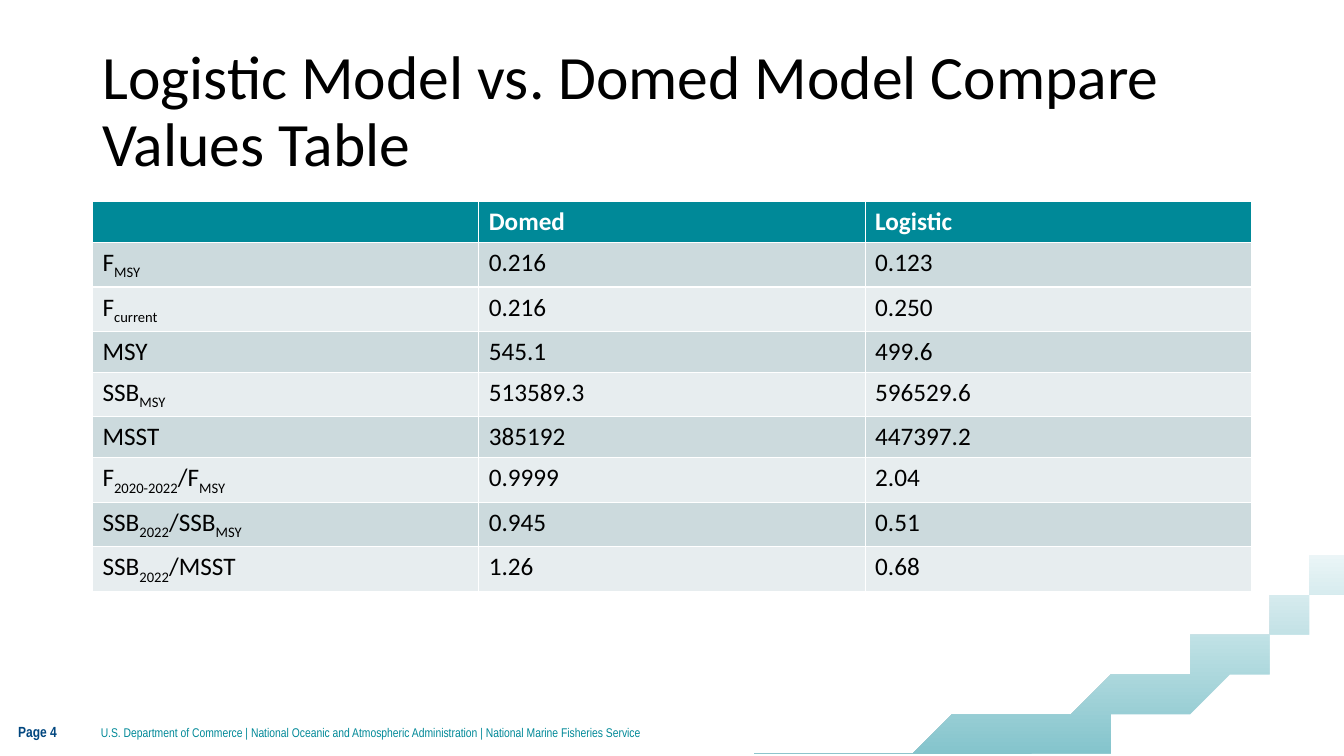
from pptx import Presentation
from pptx.dml.color import RGBColor
from pptx.enum.text import MSO_ANCHOR
from pptx.util import Cm, Pt

MIDDLE = MSO_ANCHOR.MIDDLE
TEAL, NAVY, BLACK, WHITE = "008998", "00467F", "000000", "FFFFFF"
BANDS = ("CCDADD", "E7EDEF")


def rgb(color):
    return RGBColor.from_string(color)


def format_run(r, size, name, color, bold=False):
    for key, value in {"size": Pt(size), "name": name, "bold": bold}.items():
        setattr(r.font, key, value)
    r.font.color.rgb = rgb(color)


prs = Presentation()
prs.slide_width, prs.slide_height = Cm(33.87), Cm(19.05)
s = prs.slides.add_slide(prs.slide_layouts[6])

# Swoosh: a shaded corner with a smaller white corner on top.
# Each: left end on the bottom edge, top end on the right edge, cubic curve.
corners = [
    (19.35, 13.41, [(33.66, 13.87), (32.18, 16.23), (27, 18.19), (20.22, 18.97)]),
    (25.73, 13.97, [(33.73, 14.35), (32.92, 16.51), (30.02, 18.26), (26.21, 18.97)]),
]
STEPS = 40
swoosh = []
for left, top, curve in corners:
    points = [(33.87, 19.05), (33.87, top)]
    for i in range(STEPS + 1):
        t = i / STEPS
        weights = ((1 - t) ** 3, 3 * t * (1 - t) ** 2, 3 * t ** 2 * (1 - t), t ** 3)
        points.append(tuple(sum(w * pt[axis] for w, pt in zip(weights, curve))
                            for axis in (0, 1)))
    builder = s.shapes.build_freeform(left, 19.05, scale=Cm(1))
    builder.add_line_segments(points, close=True)
    sp = builder.convert_to_shape()
    sp.shadow.inherit = False
    sp.line.fill.background()
    swoosh.append(sp)

shaded, cutout = swoosh
shaded.fill.gradient()
shaded.fill.gradient_angle = 270
for stop, color in zip(shaded.fill.gradient_stops, (WHITE, "84C4CC")):
    stop.color.rgb = rgb(color)
cutout.fill.solid()
cutout.fill.fore_color.rgb = rgb(WHITE)

# Footer and title: text, box, side inset, line spacing, font
texts = [
    ("U.S. Department of Commerce | National Oceanic and Atmospheric Administration"
     " | National Marine Fisheries Service",
     (2.54, 17.7, 24.82, 1.5), 0, 1, (9, "Arial Narrow", TEAL)),
    ("Page 4", (0.46, 17.65, 2.08, 1.55), 0, 1, (10.5, "Arial Narrow", NAVY, True)),
    ("Logistic Model vs. Domed Model Compare Values Table",
     (2.33, 1.01, 29.21, 3.68), 0.25, 0.9, (44, "Calibri", BLACK)),
]
for text, box, inset, spacing, font in texts:
    tf = s.shapes.add_textbox(*map(Cm, box)).text_frame
    tf.word_wrap = True
    tf.vertical_anchor = MIDDLE
    tf.margin_left = tf.margin_right = Cm(inset)
    p = tf.paragraphs[0]
    p.line_spacing = spacing
    r = p.add_run()
    r.text = text
    format_run(r, *font)

# In the labels, every second part between bars is a subscript.
rows = [
    ("", "Domed", "Logistic"),
    ("F|MSY", "0.216", "0.123"),
    ("F|current", "0.216", "0.250"),
    ("MSY", "545.1", "499.6"),
    ("SSB|MSY", "513589.3", "596529.6"),
    ("MSST", "385192", "447397.2"),
    ("F|2020-2022|/F|MSY", "0.9999", "2.04"),
    ("SSB|2022|/SSB|MSY", "0.945", "0.51"),
    ("SSB|2022|/MSST", "1.26", "0.68"),
]
table = s.shapes.add_table(len(rows), 3, Cm(2.33), Cm(5.08),
                           Cm(29.21), Cm(1.03 * len(rows))).table
for i, row in enumerate(rows):
    header = i == 0
    for j, text in enumerate(row):
        cell = table.cell(i, j)
        cell.fill.solid()
        cell.fill.fore_color.rgb = rgb(TEAL if header else BANDS[(i - 1) % 2])
        if not text:
            continue
        for k, part in enumerate(text.split("|")):
            r = cell.text_frame.paragraphs[0].add_run()
            r.text = part
            format_run(r, 18, "Calibri", WHITE if header else BLACK, header)
            if k % 2:
                r._r.get_or_add_rPr().set("baseline", "-25000")

prs.save("out.pptx")
